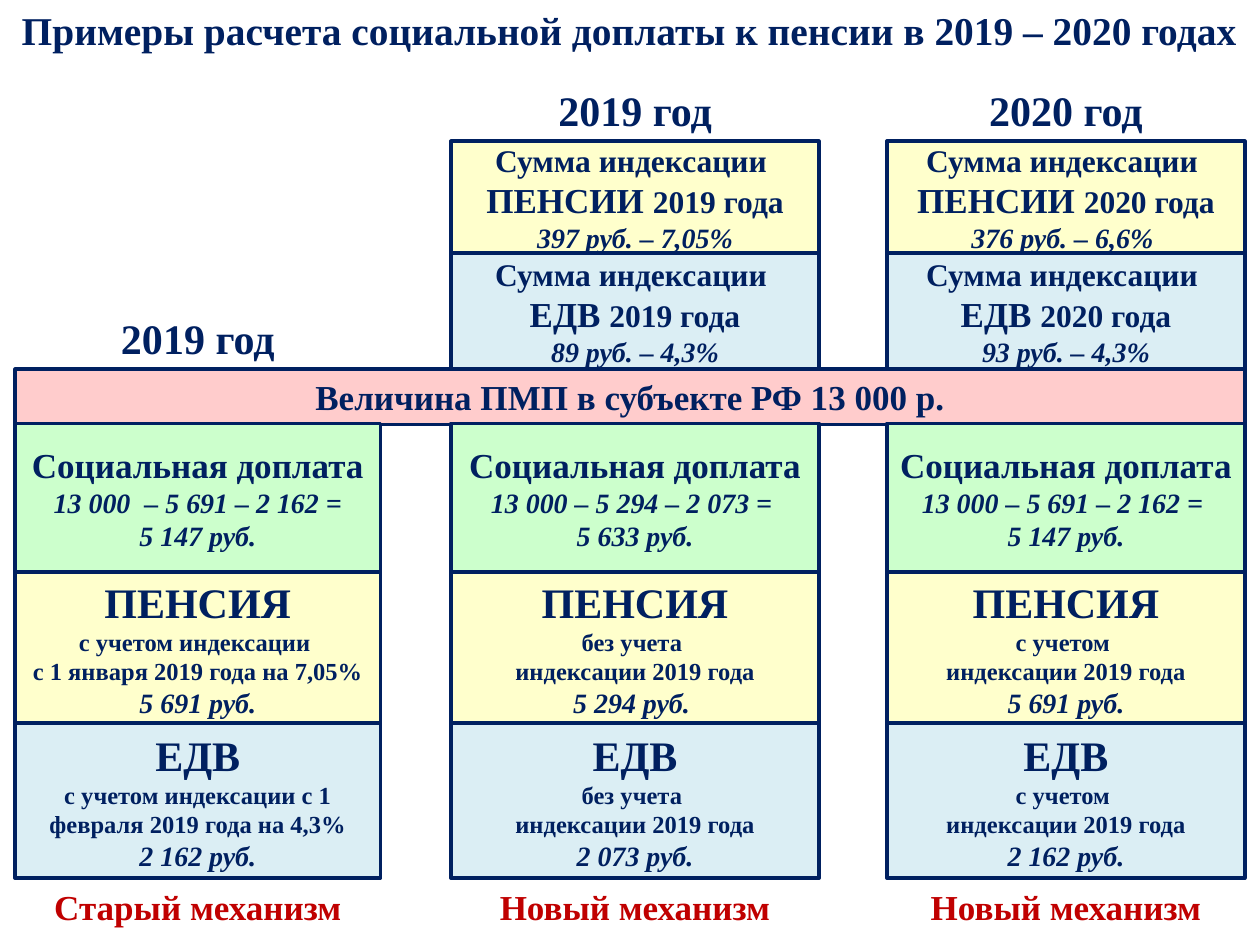
from pptx import Presentation
from pptx.dml.color import RGBColor
from pptx.enum.shapes import MSO_SHAPE
from pptx.enum.text import MSO_ANCHOR, MSO_AUTO_SIZE, PP_ALIGN
from pptx.util import Inches, Pt

RECTANGLE = MSO_SHAPE.RECTANGLE
TOP, MIDDLE = MSO_ANCHOR.TOP, MSO_ANCHOR.MIDDLE
CENTER = PP_ALIGN.CENTER
NO_FIT = MSO_AUTO_SIZE.NONE
TITLE_ONLY = 5

COLORS = {
    "navy": "002060", "red": "C00000", "blue": "DBEEF4",
    "yellow": "FFFFCC", "green": "CCFFCC", "pink": "FFCCCC",
}
COLUMNS = {"old": (0.12, 2.9), "new": (3.58, 2.92), "next": (7.04, 2.84), "all": (0.12, 9.76)}
ROWS = {
    "old year": (2.43, 0.5), "new year": (0.62, 0.5),
    "pension rise": (1.12, 0.89), "benefit rise": (2.01, 0.92),
    "minimum": (2.93, 0.44), "supplement": (3.36, 1.18),
    "pension": (4.54, 1.2), "benefit": (5.74, 1.23), "mechanism": (6.98, 0.44),
}
EXAMPLES = [
    {
        "column": "old", "year": "2019 год", "year row": "old year",
        "mechanism": "Старый механизм", "rises": None,
        "supplement": ["13 000  – 5 691 – 2 162 =", "5 147 руб."],
        "pension": (["c учетом индексации ", "с 1 января 2019 года на 7,05%"], "5 691 руб."),
        "benefit": (["c учетом индексации с 1 февраля 2019 года на 4,3%"], "2 162 руб."),
    },
    {
        "column": "new", "year": "2019 год", "year row": "new year",
        "mechanism": "Новый механизм", "rises": ("397 руб. – 7,05%", "89 руб. – 4,3%"),
        "supplement": ["13 000 – 5 294 – 2 073 = ", "5 633 руб."],
        "pension": (["без учета ", "индексации 2019 года"], "5 294 руб. "),
        "benefit": (["без учета ", "индексации 2019 года"], "2 073 руб."),
    },
    {
        "column": "next", "year": "2020 год", "year row": "new year",
        "mechanism": "Новый механизм", "rises": ("376 руб. – 6,6% ", "93 руб. – 4,3%"),
        "supplement": ["13 000 – 5 691 – 2 162 = ", "5 147 руб."],
        "pension": (["c учетом ", "индексации 2019 года"], "5 691 руб."),
        "benefit": (["с учетом ", "индексации 2019 года"], "2 162 руб."),
    },
]


class SlideBuilder:
    """Hold the style and the current slide and place elements on its grid."""

    def __init__(self, deck):
        self.page = deck.slides.add_slide(deck.slide_layouts[TITLE_ONLY])
        self.font = "Times New Roman"
        self.line_width = Pt(2)

    def color(self, name):
        return RGBColor.from_string(COLORS[name])

    def cell(self, column, row):
        (left, width), (top, height) = COLUMNS[column], ROWS[row]
        return [Inches(value) for value in (left, top, width, height)]

    def set_lines(self, shape, lines, color="navy", anchor=TOP):
        frame = shape.text_frame
        frame.word_wrap = True
        frame.auto_size = NO_FIT
        frame.vertical_anchor = anchor
        frame.text = "\n".join("" for _ in lines)
        for para, spans in zip(frame.paragraphs, lines):
            para.alignment = CENTER
            for text, size, italic in spans:
                span = para.add_run()
                span.text = text
                span.font.name = self.font
                span.font.size = Pt(size)
                span.font.bold = True
                span.font.italic = italic
                span.font.color.rgb = self.color(color)

    def title(self, text):
        box = self.page.shapes.title
        box.left, box.top, box.width, box.height = 0, 0, Inches(10), Inches(0.48)
        self.set_lines(box, [[(text, 22.5, False)]])

    def label(self, column, row, text, size, color="navy"):
        box = self.page.shapes.add_textbox(*self.cell(column, row))
        self.set_lines(box, [[(text, size, False)]], color)

    def block(self, column, row, fill, lines):
        box = self.page.shapes.add_shape(RECTANGLE, *self.cell(column, row))
        box.shadow.inherit = False
        box.fill.solid()
        box.fill.fore_color.rgb = self.color(fill)
        box.line.color.rgb = self.color("navy")
        box.line.width = self.line_width
        self.set_lines(box, lines, anchor=MIDDLE)

    def rise(self, column, row, fill, name, year, amount):
        self.block(column, row, fill, [
            [("Сумма индексации ", 18, False)],
            [(name + " ", 20, False), (year + "а", 18, False)],
            [(amount, 16, True)],
        ])

    def payment(self, column, row, fill, name, notes, amount):
        self.block(column, row, fill, [
            [(name, 24, False)],
            *[[(note, 14, False)] for note in notes],
            [(amount, 16, True)],
        ])

    def supplement(self, column, sums):
        self.block(column, "supplement", "green", [
            [("Социальная доплата", 20, False)],
            *[[(text, 16, True)] for text in sums],
        ])


def main():
    deck = Presentation()
    deck.slide_width, deck.slide_height = Inches(10), Inches(7.5)
    builder = SlideBuilder(deck)
    builder.title("Примеры расчета социальной доплаты к пенсии в 2019 – 2020 годах")
    for example in EXAMPLES:
        if example["rises"]:
            column, year = example["column"], example["year"]
            pension, benefit = example["rises"]
            builder.rise(column, "pension rise", "yellow", "ПЕНСИИ", year, pension)
            builder.rise(column, "benefit rise", "blue", "ЕДВ", year, benefit)
    builder.block("all", "minimum", "pink", [[("Величина ПМП в субъекте РФ 13 000 р.", 20, False)]])
    for example in EXAMPLES:
        column = example["column"]
        builder.payment(column, "benefit", "blue", "ЕДВ", *example["benefit"])
        builder.payment(column, "pension", "yellow", "ПЕНСИЯ", *example["pension"])
        builder.supplement(column, example["supplement"])
        builder.label(column, "mechanism", example["mechanism"], 20, "red")
        builder.label(column, example["year row"], example["year"], 24)
    deck.save("out.pptx")


if __name__ == "__main__":
    main()
